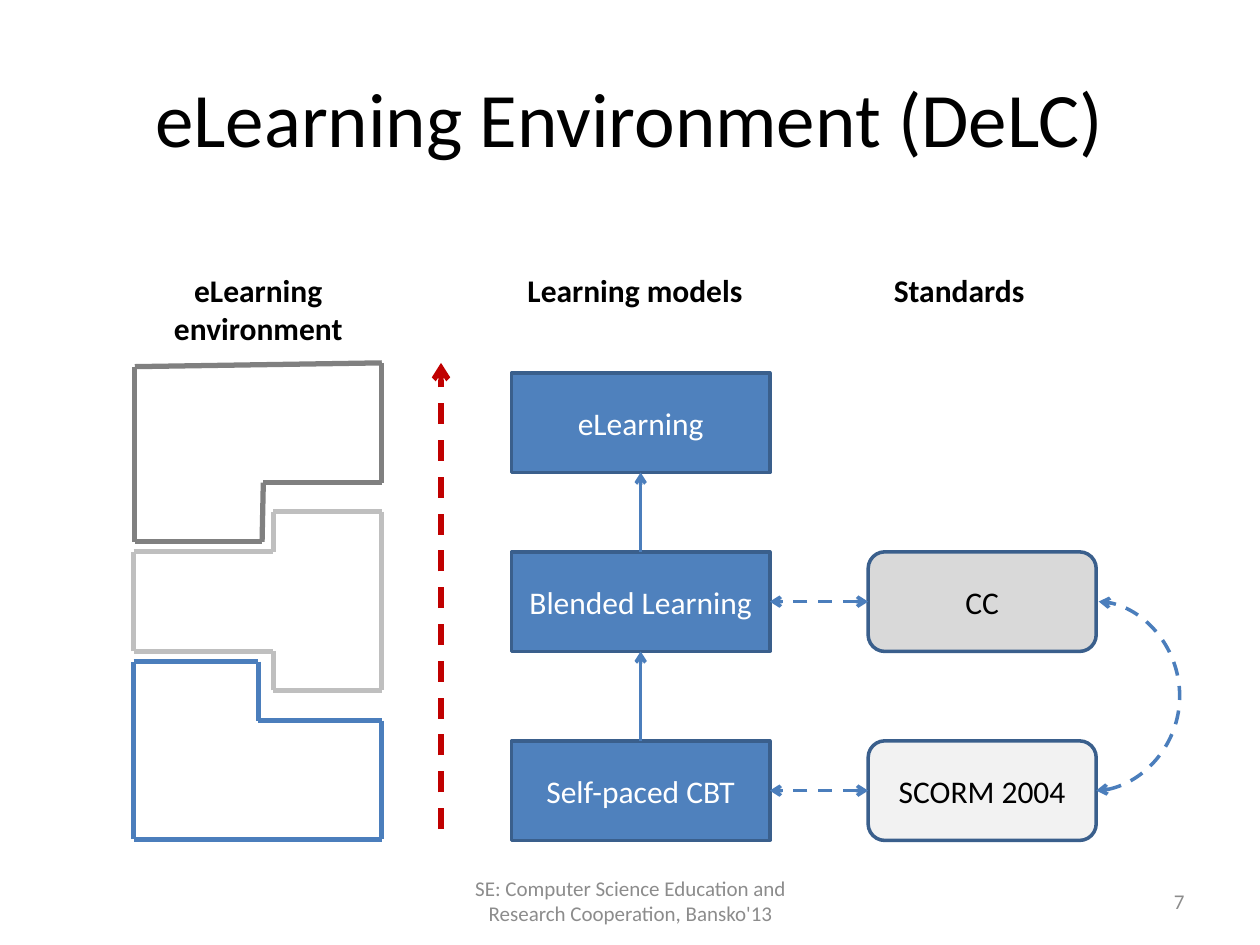
"""Build the eLearning environment slide: outlined blocks, learning models and standards."""
from lxml import etree
from pptx import Presentation
from pptx.dml.color import RGBColor
from pptx.enum.dml import MSO_LINE
from pptx.enum.shapes import MSO_CONNECTOR, MSO_SHAPE
from pptx.enum.text import MSO_ANCHOR, PP_ALIGN
from pptx.oxml.ns import qn
from pptx.util import Inches, Pt

STRAIGHT, CURVE = MSO_CONNECTOR.STRAIGHT, MSO_CONNECTOR.CURVE
RECTANGLE, ROUNDED = MSO_SHAPE.RECTANGLE, MSO_SHAPE.ROUNDED_RECTANGLE
CENTER, RIGHT = PP_ALIGN.CENTER, PP_ALIGN.RIGHT
TOP, MIDDLE = MSO_ANCHOR.TOP, MSO_ANCHOR.MIDDLE
TOP_SIDE, LEFT_SIDE, BOTTOM_SIDE, RIGHT_SIDE = range(4)

BLACK = RGBColor(0x00, 0x00, 0x00)
WHITE = RGBColor(0xFF, 0xFF, 0xFF)
FOOTER_GRAY = RGBColor(0x8C, 0x8C, 0x8C)
DARK_GRAY = RGBColor(0x80, 0x80, 0x80)
MID_GRAY = RGBColor(0xBF, 0xBF, 0xBF)
CC_GRAY = RGBColor(0xD9, 0xD9, 0xD9)
SCORM_GRAY = RGBColor(0xF2, 0xF2, 0xF2)
BLUE = RGBColor(0x4F, 0x81, 0xBD)
LINE_BLUE = RGBColor(0x4B, 0x7E, 0xBC)
EDGE_BLUE = RGBColor(0x3A, 0x5F, 0x8C)
RED = RGBColor(0xC0, 0x00, 0x00)

MODEL_X, MODEL_WIDTH = 4.06, 2.05
STANDARD_X, STANDARD_WIDTH = 6.89, 1.81
TOP_ROW, MIDDLE_ROW, BOTTOM_ROW = 2.96, 4.38, 5.88
ROW_HEIGHT = 0.79
BLOCK_LEFT, BLOCK_RIGHT = 1.06, 3.03


def write(shape, text, size, color, align=CENTER, anchor=MIDDLE, bold=None):
    frame = shape.text_frame
    frame.word_wrap = True
    frame.vertical_anchor = anchor
    frame.text = text
    para = frame.paragraphs[0]
    para.alignment = align
    para.font.name = "Calibri"
    para.font.size = Pt(size)
    para.font.bold = bold
    para.font.color.rgb = color


def connect(shapes, start, end, color, width, kind=STRAIGHT, dashed=False, arrows=()):
    points = [Inches(value) for value in (*start, *end)]
    connector = shapes.add_connector(kind, *points)
    line = connector.line
    line.color.rgb = color
    line.width = Pt(width)
    if dashed:
        line.dash_style = MSO_LINE.DASH
    properties = connector._element.spPr
    for arrow in arrows:
        etree.SubElement(properties.find(qn("a:ln")), qn(arrow), type="arrow")
    etree.SubElement(properties, qn("a:effectLst"))
    return connector


deck = Presentation()
deck.slide_width, deck.slide_height = Inches(10), Inches(7.5)
page = deck.slides.add_slide(deck.slide_layouts[5])
shapes = page.shapes

title = shapes.title
title.left, title.top = Inches(0.5), Inches(0.3)
title.width, title.height = Inches(9), Inches(1.25)
write(title, "eLearning Environment (DeLC)", 44, BLACK)

footer = "SE: Computer Science Education and Research Cooperation, Bansko'13"
captions = [
    (3.42, 6.95, 3.17, 0.4, footer, 12, FOOTER_GRAY, CENTER, MIDDLE, None),
    (7.17, 6.95, 2.33, 0.4, "7", 12, FOOTER_GRAY, RIGHT, MIDDLE, None),
    (0.91, 2.1, 2.28, 0.71, "eLearning environment", 18, BLACK, CENTER, TOP, True),
    (3.9, 2.1, 2.28, 0.4, "Learning models", 18, BLACK, CENTER, TOP, True),
    (6.5, 2.1, 2.28, 0.4, "Standards ", 18, BLACK, CENTER, TOP, True),
]
for left, top, width, height, *content in captions:
    box = shapes.add_textbox(Inches(left), Inches(top), Inches(width), Inches(height))
    write(box, *content)

outlines = [
    (LINE_BLUE, [(BLOCK_LEFT, 5.25), (2.05, 5.25), (2.05, 5.72),
                 (BLOCK_RIGHT, 5.72), (BLOCK_RIGHT, 6.66), (BLOCK_LEFT, 6.66)]),
    (DARK_GRAY, [(1.07, 2.91), (BLOCK_RIGHT, 2.88), (BLOCK_RIGHT, 3.83),
                 (2.09, 3.83), (2.08, 4.3), (1.07, 4.3)]),
    (MID_GRAY, [(BLOCK_LEFT, 4.38), (2.17, 4.38), (2.17, 4.06), (BLOCK_RIGHT, 4.06),
                (BLOCK_RIGHT, 5.48), (2.17, 5.48), (2.17, 5.17), (BLOCK_LEFT, 5.17)]),
]
for color, corners in outlines:
    group = shapes.add_group_shape()
    for start, end in zip(corners, corners[1:] + corners[:1]):
        connect(group.shapes, start, end, color, 3)

MODEL = (RECTANGLE, MODEL_X, MODEL_WIDTH, BLUE, WHITE)
STANDARD = (ROUNDED, STANDARD_X, STANDARD_WIDTH)
nodes = [
    ("Self-paced CBT", BOTTOM_ROW, *MODEL),
    ("Blended Learning", MIDDLE_ROW, *MODEL),
    ("eLearning", TOP_ROW, *MODEL),
    ("SCORM 2004", BOTTOM_ROW, *STANDARD, SCORM_GRAY, BLACK),
    ("CC", MIDDLE_ROW, *STANDARD, CC_GRAY, BLACK),
]
boxes = {}
for text, row, outline, column, width, fill, color in nodes:
    box = shapes.add_shape(outline, Inches(column), Inches(row), Inches(width), Inches(ROW_HEIGHT))
    box.shadow.inherit = False
    box.fill.solid()
    box.fill.fore_color.rgb = fill
    box.line.color.rgb = EDGE_BLUE
    box.line.width = Pt(2)
    write(box, text, 18, color)
    boxes[text] = box

BOTH_ENDS, END_ONLY = ("a:headEnd", "a:tailEnd"), ("a:tailEnd",)
links = [
    ("Self-paced CBT", TOP_SIDE, "Blended Learning", BOTTOM_SIDE, False, END_ONLY),
    ("Blended Learning", TOP_SIDE, "eLearning", BOTTOM_SIDE, False, END_ONLY),
    ("SCORM 2004", LEFT_SIDE, "Self-paced CBT", RIGHT_SIDE, True, BOTH_ENDS),
    ("CC", LEFT_SIDE, "Blended Learning", RIGHT_SIDE, True, BOTH_ENDS),
]
for source, source_side, target, target_side, dashed, arrows in links:
    link = connect(shapes, (0, 0), (1, 1), LINE_BLUE, 2, dashed=dashed, arrows=arrows)
    link.begin_connect(boxes[source], source_side)
    link.end_connect(boxes[target], target_side)

standard_right = STANDARD_X + STANDARD_WIDTH
arc = connect(shapes, (standard_right, BOTTOM_ROW + ROW_HEIGHT / 2),
              (standard_right + 0.02, MIDDLE_ROW + ROW_HEIGHT / 2),
              LINE_BLUE, 2, CURVE, True, BOTH_ENDS)
geometry = arc._element.spPr.find(qn("a:prstGeom"))
guides = geometry.find(qn("a:avLst"))
if guides is None:
    guides = etree.SubElement(geometry, qn("a:avLst"))
etree.SubElement(guides, qn("a:gd"), name="adj1", fmla="val 3300000")

connect(shapes, (3.5, 6.58), (3.5, 2.88), RED, 3, dashed=True, arrows=END_ONLY)

deck.save("out.pptx")
